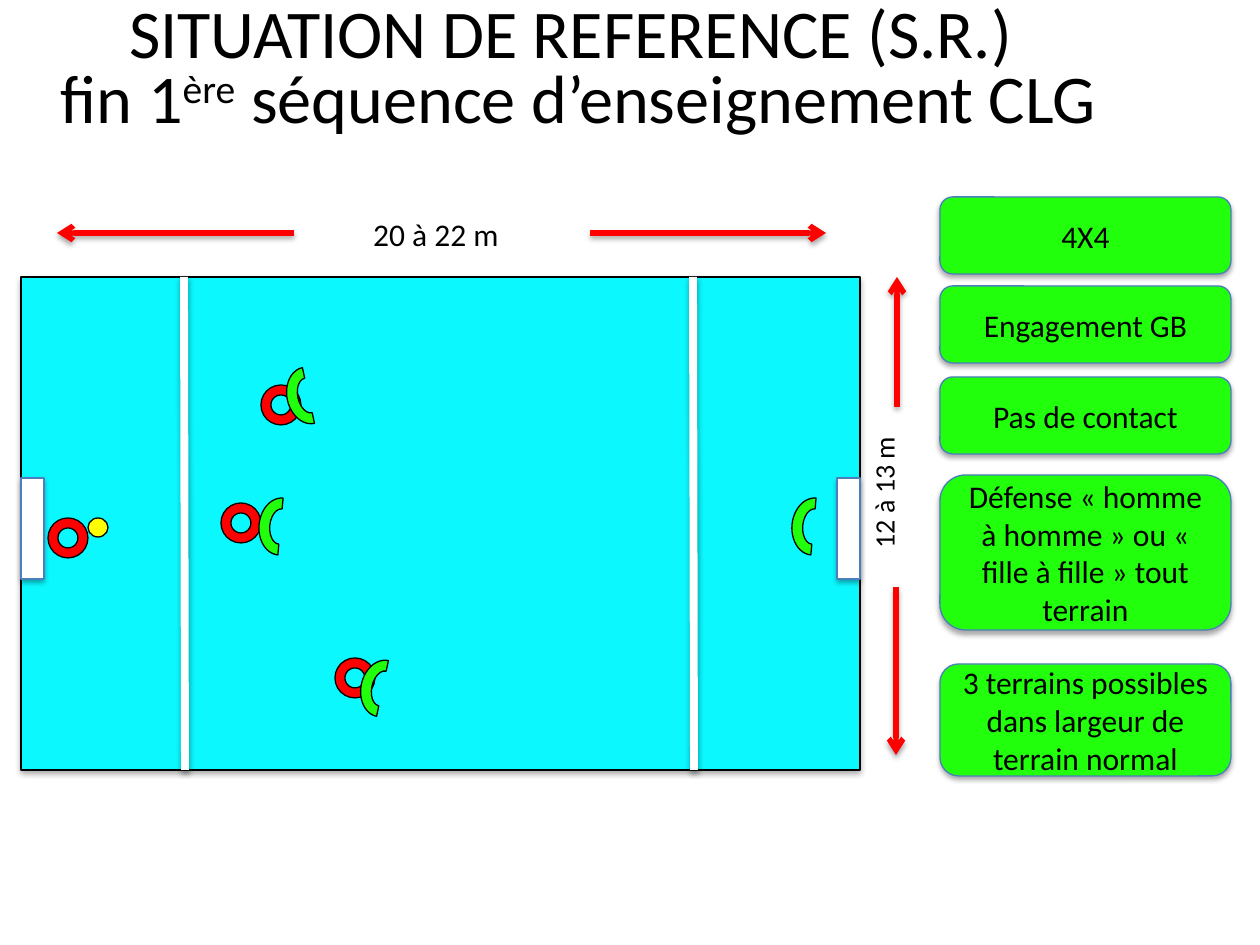
import pptx
import pptx.dml.color
import pptx.enum.shapes
import pptx.enum.text
import pptx.oxml
import pptx.oxml.ns
import pptx.util

KIND = pptx.enum.shapes.MSO_SHAPE
MID = pptx.enum.text.MSO_ANCHOR.MIDDLE
TOP = pptx.enum.text.MSO_ANCHOR.TOP
UNIT = 914400 / 126
BLACK, WHITE, RED, GREEN = "000000", "FFFFFF", "FF0000", "21FF0C"
CYAN, YELLOW, BLUE = "0CF8FF", "FFFF00", "4B7EBC"


def px(size):
    return pptx.util.Emu(round(size * UNIT))


def tint(code):
    return pptx.dml.color.RGBColor.from_string(code)


def node(tag, **attrs):
    item = pptx.oxml.parse_xml(f"<a:{tag} {pptx.oxml.ns.nsdecls('a')}/>")
    for name, value in attrs.items():
        item.set(name, str(value))
    return item


class Board:
    """Draws styled pitch elements on one slide."""

    def __init__(self, slide, font="Calibri"):
        self.items = slide.shapes
        self.font = font

    def shade(self, props):
        glow = node("outerShdw", blurRad=38100, dist=22860, dir=5400000, rotWithShape=0)
        color = node("srgbClr", val=BLACK)
        color.append(node("alpha", val=35000))
        glow.append(color)
        props.find(pptx.oxml.ns.qn("a:effectLst")).append(glow)

    def shape(self, kind, x, y, wide, high, fill, edge=BLACK, shade=False, turn=0):
        item = self.items.add_shape(kind, px(x), px(y), px(wide), px(high))
        item.fill.solid()
        item.fill.fore_color.rgb = tint(fill)
        item.line.color.rgb = tint(edge)
        item.line.width = pptx.util.Pt(0.75)
        item.shadow.inherit = False
        item.rotation = turn
        if shade:
            self.shade(item._element.spPr)
        return item

    def line(self, x1, y1, x2, y2, color, width, head=False):
        item = self.items.add_connector(
            pptx.enum.shapes.MSO_CONNECTOR.STRAIGHT, px(x1), px(y1), px(x2), px(y2))
        item.line.color.rgb = tint(color)
        item.line.width = pptx.util.Pt(width)
        if head:
            item.line._get_or_add_ln().append(node("tailEnd", type="arrow"))
        props = item._element.spPr
        props.append(node("effectLst"))
        self.shade(props)

    def style(self, frame, size, anchor, wrap=True):
        frame.word_wrap = wrap
        frame.vertical_anchor = anchor
        for par in frame.paragraphs:
            par.alignment = pptx.enum.text.PP_ALIGN.CENTER
            for run in par.runs:
                run.font.name = self.font
                run.font.size = pptx.util.Pt(size)
                run.font.color.rgb = tint(BLACK)

    def card(self, y, high, text):
        item = self.shape(KIND.ROUNDED_RECTANGLE, 940, y, 291, high, GREEN, BLUE, True)
        item.text_frame.text = text
        self.style(item.text_frame, 18, MID)

    def label(self, x, y, wide, high, text, size, turn=0):
        item = self.items.add_textbox(px(x), px(y), px(wide), px(high))
        item.rotation = turn
        item.text_frame.text = text
        self.style(item.text_frame, size, TOP, False)

    def title(self, x, y, wide, high, start, raised, end):
        frame = self.items.add_textbox(px(x), px(y), px(wide), px(high)).text_frame
        frame.margin_left = frame.margin_right = px(6)
        frame.margin_top = frame.margin_bottom = px(6)
        par = frame.paragraphs[0]
        par.text = start
        par.line_spacing = 0.8
        power = par.add_run()
        power.text = raised
        par.add_run().text = end
        self.style(frame, 39, TOP)
        power._r.get_or_add_rPr().set("baseline", "30000")


def main():
    deck = pptx.Presentation()
    deck.slide_width, deck.slide_height = px(1260), px(945)
    board = Board(deck.slides.add_slide(deck.slide_layouts[6]))

    board.shape(KIND.RECTANGLE, 21, 277, 839, 493, CYAN, shade=True)
    for x in (184, 693):
        board.line(x, 277, x + 1, 770, WHITE, 4.5)
    for x in (21, 837):
        board.shape(KIND.RECTANGLE, x, 478, 23, 101, WHITE, BLUE, True)

    for x, y in ((221, 503), (261, 385), (335, 658), (48, 518)):
        board.shape(KIND.DONUT, x, y, 40, 40, RED)
    for x, y, turn in ((280, 374, 257.8), (354, 667, 282), (252, 505, 275.3), (785, 505, 275.3)):
        board.shape(KIND.BLOCK_ARC, x, y, 57, 43, GREEN, turn=turn)
    board.shape(KIND.FLOWCHART_CONNECTOR, 88, 518, 20, 19, YELLOW)

    for y, high, text in (
        (197, 77, "4X4"),
        (286, 77, "Engagement GB"),
        (377, 77, "Pas de contact"),
        (475, 155, "Défense « homme à homme » ou « fille à fille » tout terrain"),
        (664, 112, "3 terrains possibles dans largeur de terrain normal"),
    ):
        board.card(y, high, text)

    for ends in ((294, 233, 57, 233), (590, 233, 826, 233),
                 (896, 587, 896, 755), (897, 407, 897, 277)):
        board.line(*ends, RED, 3, True)
    board.label(354, 209, 164, 50, "20 à 22 m", 18)
    board.label(805, 469, 158, 47, "12 à 13 m", 16, 270)
    board.title(11, 0, 1135, 161, "SITUATION DE REFERENCE (S.R.) \vfin 1",
                "ère", " séquence d’enseignement CLG")
    deck.save("out.pptx")


if __name__ == "__main__":
    main()
